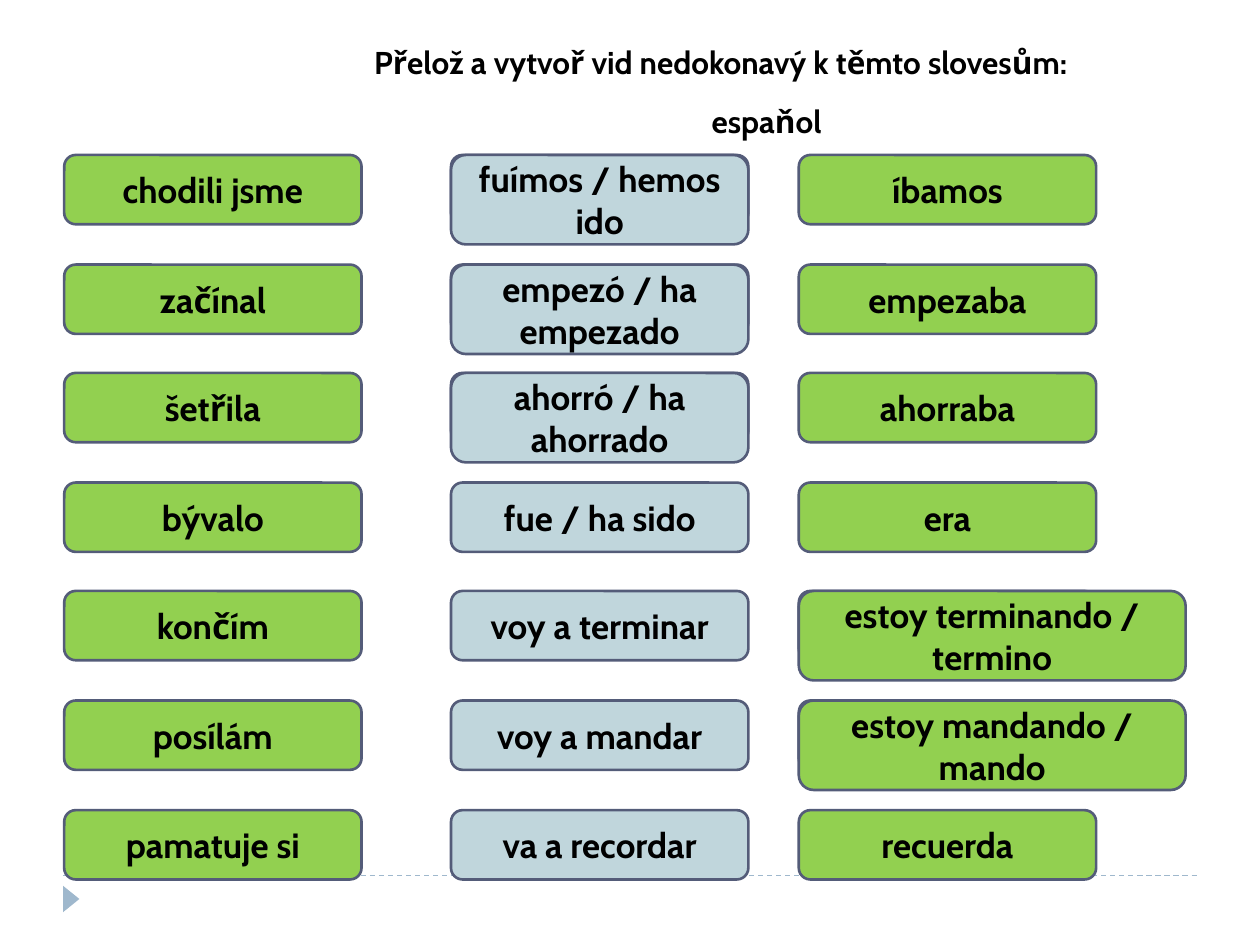
from pptx import Presentation
from pptx.dml.color import RGBColor
from pptx.enum.dml import MSO_LINE
from pptx.enum.shapes import MSO_CONNECTOR, MSO_SHAPE
from pptx.enum.text import MSO_ANCHOR, MSO_AUTO_SIZE, PP_ALIGN
from pptx.oxml.ns import qn
from pptx.util import Emu, Pt
from lxml.etree import SubElement

EMU_PER_PX = 9144  # 100 px to the inch
FONT = "Cabin"
BLACK, GREEN, BLUE = "000000", "92D050", "C0D6DC"
OUTLINE, DECORATION = "545C79", "9FB8CD"

FIRST_ROW_TOP, ROW_PITCH = 123, 86.6
CARD_WIDTH, CARD_HEIGHT, TALL_HEIGHT = 236, 55, 71

# Left edge, fill, width of two-line cards, rows with two lines, words
COLUMNS = [
    (358, BLUE, CARD_WIDTH, {0, 1, 2},
     ["fuímos / hemos ido", "empezó / ha empezado", "ahorró / ha ahorrado",
      "fue / ha sido", "voy a terminar", "voy a mandar", "va a recordar"]),
    (51, GREEN, CARD_WIDTH, set(),
     ["chodili jsme", "začínal", "šetřila", "bývalo", "končím", "posílám",
      "pamatuje si"]),
    (634, GREEN, 307, {4, 5},
     ["íbamos", "empezaba", "ahorraba", "era", "estoy terminando / termino",
      "estoy mandando / mando", "recuerda"]),
]


def px(length):
    return Emu(length * EMU_PER_PX)


def color(hex_code):
    return RGBColor.from_string(hex_code)


def write(frame, text, size, align):
    frame.text = text
    paragraph = frame.paragraphs[0]
    paragraph.alignment = align
    for run in paragraph.runs:
        run.font.name = FONT
        run.font.size = Pt(size)
        run.font.bold = True
        run.font.color.rgb = color(BLACK)


def format_heading(heading, left, top, width, height, text):
    heading.left, heading.top = px(left), px(top)
    heading.width, heading.height = px(width), px(height)
    frame = heading.text_frame
    write(frame, text, 18, PP_ALIGN.LEFT)
    frame.word_wrap = False
    frame.auto_size = MSO_AUTO_SIZE.SHAPE_TO_FIT_TEXT
    frame.vertical_anchor = MSO_ANCHOR.TOP


def add_filled(slide, kind, left, top, width, height, fill):
    shape = slide.shapes.add_shape(kind, px(left), px(top), px(width), px(height))
    shape.shadow.inherit = False
    shape.fill.solid()
    shape.fill.fore_color.rgb = color(fill)
    return shape


def add_card(slide, left, top, width, height, fill, text=""):
    card = add_filled(slide, MSO_SHAPE.ROUNDED_RECTANGLE,
                      left, top, width, height, fill)
    card.line.color.rgb = color(OUTLINE)
    card.line.width = Pt(1.5)
    if text:
        card.text_frame.vertical_anchor = MSO_ANCHOR.MIDDLE
        write(card.text_frame, text, 20, PP_ALIGN.CENTER)


def add_column(slide, left, fill, tall_width, tall_rows, words):
    tops = [round(FIRST_ROW_TOP + row * ROW_PITCH) for row in range(len(words))]
    # Plain cards lie under the two-line ones
    for row in sorted(tall_rows):
        add_card(slide, left, tops[row], CARD_WIDTH, CARD_HEIGHT, fill)
    for row, word in enumerate(words):
        tall = row in tall_rows
        add_card(slide, left, tops[row], tall_width if tall else CARD_WIDTH,
                 TALL_HEIGHT if tall else CARD_HEIGHT, fill, word)


def add_footer_decoration(slide):
    rule = slide.shapes.add_connector(MSO_CONNECTOR.STRAIGHT,
                                      px(50), px(695), px(950), px(695))
    rule.line.color.rgb = color(DECORATION)
    rule.line.width = Pt(0.75)
    rule.line.dash_style = MSO_LINE.DASH
    SubElement(rule._element.spPr, qn("a:effectLst"))
    marker = add_filled(slide, MSO_SHAPE.ISOSCELES_TRIANGLE,
                        46, 707, 21, 13, DECORATION)
    marker.rotation = 90
    marker.line.fill.background()


def main():
    presentation = Presentation()
    presentation.slide_width, presentation.slide_height = px(1000), px(750)
    slide = presentation.slides.add_slide(presentation.slide_layouts[5])

    # Footer rule and marker, behind the cards
    add_footer_decoration(slide)

    # Headings
    format_heading(slide.shapes.title, 287, 29, 609, 40,
                   "Přelož a vytvoř vid nedokonavý k těmto slovesům:")
    language = slide.shapes.add_textbox(0, 0, 0, 0)
    format_heading(language, 555, 76, 109, 40, "espaňol")

    # Verb cards
    for column in COLUMNS:
        add_column(slide, *column)

    presentation.save("out.pptx")


if __name__ == "__main__":
    main()
